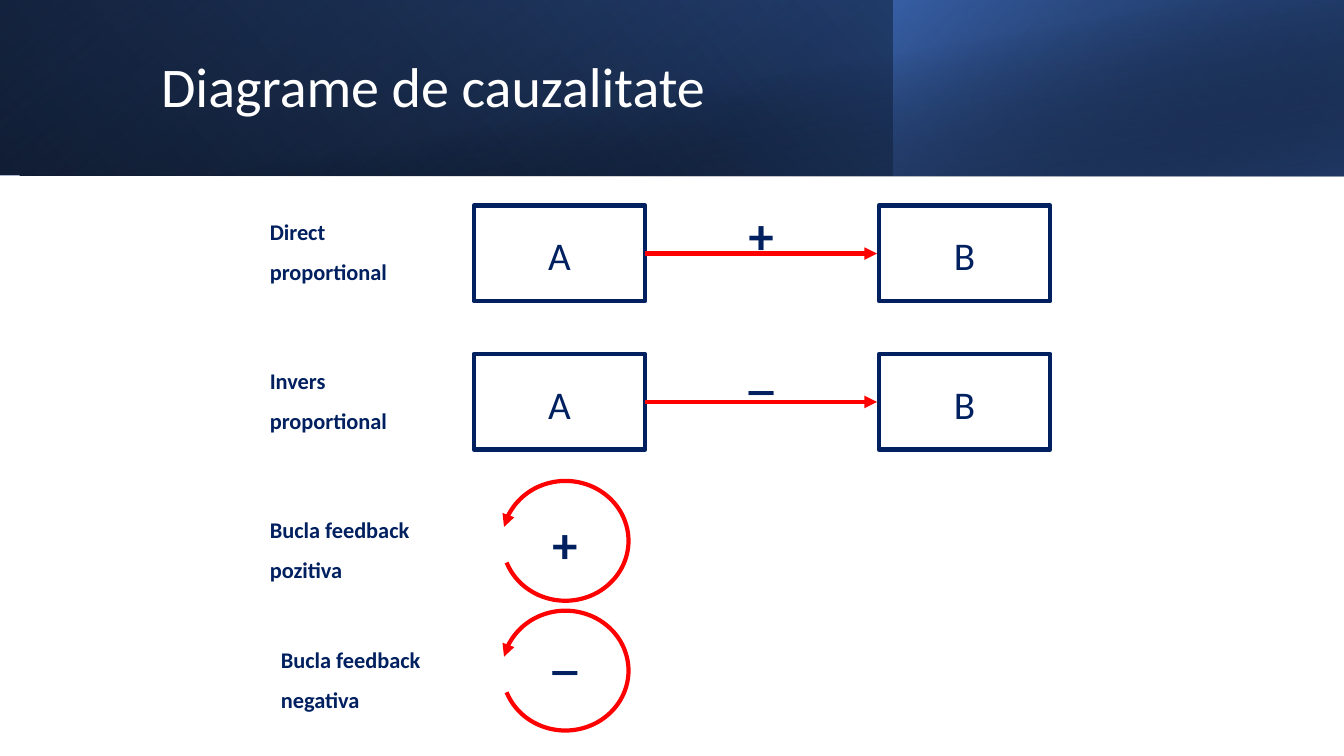
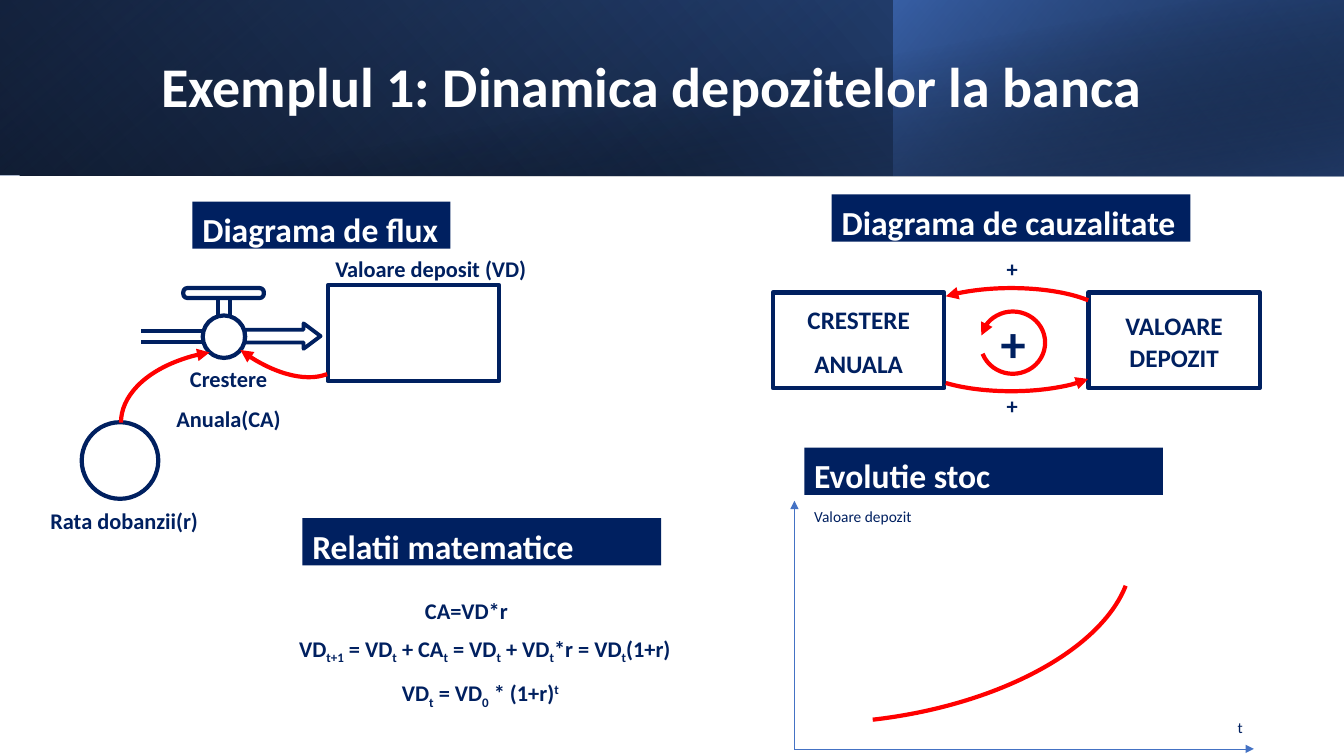
from pptx import Presentation
from pptx.dml.color import RGBColor
from pptx.enum.shapes import MSO_CONNECTOR, MSO_SHAPE
from pptx.enum.text import MSO_ANCHOR, PP_ALIGN
from pptx.oxml.ns import qn
from pptx.oxml.xmlchemy import OxmlElement
from pptx.util import Cm, Pt

COLORS = {
    "navy": "002060", "red": "FF0000", "white": "FFFFFF", "black": "000000",
    "blue": "4472C4", "midblue": "2F5597", "darkblue": "203864",
}
FONT = "Calibri"
WIDTH, HEIGHT = 33.87, 19.05
BOX_W, BOX_H = 4.32, 2.41
LINE_H = 0.86
LOOP = (7.652, 203.85)
BOW = (116.767, 203.85)


class Deck:
    """Hold the shared style and the current slide."""

    def __init__(self):
        self.prs = Presentation()
        self.prs.slide_width, self.prs.slide_height = Cm(WIDTH), Cm(HEIGHT)
        self.slide = None

    def color(self, name):
        return RGBColor.from_string(COLORS[name])

    def add_slide(self, title, bold=False):
        self.slide = self.prs.slides.add_slide(self.prs.slide_layouts[6])
        self.band(0, WIDTH, 4.42, 140, [(0, "black", 100), (1, "midblue", 100)])
        self.band(0, 22.56, 4.42, 230, [(0.2, "blue", 0), (1, "darkblue", 55)], rotation=180)
        self.band(22.53, 11.33, 4.42, 220, [(0, "blue", 66), (1, "black", 30)])
        self.band(1.27, 32.6, 4.45, 280, [(0.5, "black", 0), (0.99, "darkblue", 52)], flip="")
        s = self.text(3.81, 0.81, 28.7, 2.87, [title], 40, "white", bold, wrap=True)
        s.text_frame.vertical_anchor = MSO_ANCHOR.MIDDLE
        p = s.text_frame.paragraphs[0]
        p.line_spacing, p.space_after = 0.9, Pt(0)

    def band(self, x, w, h, angle, stops, flip="H", rotation=0):
        s = self.shape(MSO_SHAPE.RECTANGLE, x, 0, w, h, line=None, flip=flip, rotation=rotation)
        s.fill.gradient()
        s.fill.gradient_angle = angle
        for stop, (position, name, _) in zip(s.fill.gradient_stops, stops):
            stop.position = position
            stop.color.rgb = self.color(name)
        for clr, (_, _, opacity) in zip(s.element.spPr.iter(qn("a:srgbClr")), stops):
            alpha = OxmlElement("a:alpha")
            alpha.set("val", str(opacity * 1000))
            clr.append(alpha)

    def shape(self, kind, x, y, w, h, line="navy", width=3, adj=(), flip="", rotation=0):
        s = self.slide.shapes.add_shape(kind, Cm(x), Cm(y), Cm(w), Cm(h))
        s.shadow.inherit = False
        s.fill.background()
        if line:
            s.line.color.rgb, s.line.width = self.color(line), Pt(width)
        else:
            s.line.fill.background()
        for i, value in enumerate(adj):
            s.adjustments[i] = value
        s.rotation = rotation
        for axis in flip:
            s.element.spPr.find(qn("a:xfrm")).set("flip" + axis, "1")
        return s

    def arrowhead(self, s, end):
        tip = OxmlElement(f"a:{end}End")
        tip.set("type", "triangle")
        s.element.spPr.find(qn("a:ln")).append(tip)

    def arc(self, x, y, w, h, adj, flip, end="head", rotation=0):
        s = self.shape(MSO_SHAPE.ARC, x, y, w, h, "red", adj=adj, flip=flip, rotation=rotation)
        if end:
            self.arrowhead(s, end)

    def line(self, x1, y1, x2, y2, name="navy", width=2.75, arrow=False):
        s = self.slide.shapes.add_connector(MSO_CONNECTOR.STRAIGHT, Cm(x1), Cm(y1), Cm(x2), Cm(y2))
        s.line.color.rgb, s.line.width = self.color(name), Pt(width)
        s.element.spPr.append(OxmlElement("a:effectLst"))
        if arrow:
            self.arrowhead(s, "tail")

    def fill_text(self, s, lines, size, name, bold, align):
        tf = s.text_frame
        for i, text in enumerate(lines):
            p = tf.add_paragraph() if i else tf.paragraphs[0]
            p.alignment, p.line_spacing, p.space_after = align, 1.07, Pt(8)
            p.font.name, p.font.size, p.font.bold = FONT, Pt(size), bold
            p.font.color.rgb = self.color(name)
            for j, piece in enumerate(text.split("|")):
                r = p.add_run()
                r.text = piece.lstrip("^")
                if j % 2:
                    baseline = "30000" if piece.startswith("^") else "-25000"
                    r._r.get_or_add_rPr().set("baseline", baseline)

    def text(self, x, y, w, h, lines, size=16, name="navy", bold=True,
             align=PP_ALIGN.LEFT, wrap=False):
        s = self.slide.shapes.add_textbox(Cm(x), Cm(y), Cm(w), Cm(h))
        s.text_frame.word_wrap = wrap
        self.fill_text(s, lines, size, name, bold, align)
        return s

    def sign(self, x, y, symbol, w=0.86, h=1.83):
        tf = self.text(x, y, w, h, [symbol], 36, wrap=True).text_frame
        tf.margin_left = tf.margin_right = tf.margin_top = tf.margin_bottom = 0

    def box(self, x, y, lines=(), size=28, bold=False):
        s = self.shape(MSO_SHAPE.RECTANGLE, x, y, BOX_W, BOX_H)
        s.text_frame.vertical_anchor = MSO_ANCHOR.MIDDLE
        self.fill_text(s, lines, size, "navy", bold, PP_ALIGN.CENTER)

    def heading(self, x, y, w, text):
        s = self.shape(MSO_SHAPE.RECTANGLE, x, y, w, 1.19, line=None)
        s.fill.solid()
        s.fill.fore_color.rgb = self.color("navy")
        s.text_frame.vertical_anchor = MSO_ANCHOR.TOP
        s.text_frame.margin_right = 0
        self.fill_text(s, [text], 24, "white", True, PP_ALIGN.LEFT)


def causality_slide(d):
    d.add_slide("Diagrame de cauzalitate")
    for y, word, symbol, rise in ((5.18, "Direct", "+", 0.13), (8.92, "Invers", "_", 0.51)):
        d.box(11.94, y, ["A"])
        d.line(16.26, y + 1.21, 22.1, y + 1.21, "red", 3, arrow=True)
        d.box(22.15, y, ["B"])
        d.sign(18.87, y - rise, symbol)
        d.text(6.55, y + 0.15, 3.51, 2.08, [word, "proportional"])
    for y, x, word, symbol, drop in ((12.12, 6.55, "pozitiva", "+", 0.71),
                                     (15.39, 6.83, "negativa", "_", 0.08)):
        d.arc(12.66, y, 3.18, 3.02, LOOP, "HV")
        d.sign(13.92, y + drop, symbol)
        d.text(x, y + 0.72, 4.06, 2.03, ["Bucla feedback", word])


def flow_diagram(d):
    d.heading(4.85, 5.08, 6.5, "Diagrama de flux")
    d.shape(MSO_SHAPE.OVAL, 5.11, 7.95, 1.07, 1.07)
    for x in (5.49, 5.79):
        d.line(x, 7.52, x, 7.95)
    d.shape(MSO_SHAPE.ROUNDED_RECTANGLE, 4.62, 7.26, 2.03, 0.25, adj=(0.41,))
    d.shape(MSO_SHAPE.RIGHT_ARROW, 6.17, 8.15, 1.91, 0.64, width=2.75, adj=(0.5, 0.67))
    for y in (8.33, 8.61):
        d.line(5.13, y, 3.56, y)
    d.box(8.26, 7.19)
    d.shape(MSO_SHAPE.OVAL, 2.06, 10.64, 1.93, 1.93)
    d.arc(3.05, 8.81, 6.15, 3.68, (177.24, 0), "H")
    d.arc(3.86, 5.74, 5.51, 3.07, (177.24, 211.34), "H", rotation=225.1)
    d.text(8.2, 6.25, 5.38, LINE_H, ["Valoare deposit (VD)"])
    d.text(1.02, 12.6, 4.27, LINE_H, ["Rata dobanzii(r)"])
    d.text(4.17, 9.04, 3.18, 2.13, ["Crestere", "Anuala(CA)"], align=PP_ALIGN.CENTER)


def causal_diagram(d):
    d.heading(20.96, 4.9, 9.04, "Diagrama de cauzalitate")
    d.box(27.43, 7.37, ["VALOARE DEPOZIT"], 18, True)
    d.box(19.48, 7.37, ["CRESTERE", "ANUALA"], 18, True)
    d.arc(23.01, 7.26, 4.95, 1.63, BOW, "H", "tail")
    d.arc(23.01, 8.23, 4.95, 1.63, BOW, "HV")
    for y in (6.25, 9.7):
        d.text(25.12, y, 0.81, LINE_H, ["+"])
    d.arc(24.71, 7.85, 1.63, 1.57, LOOP, "HV")
    d.sign(25.22, 7.75, "+", 1.19, 1.32)


def formulas(d):
    d.heading(7.62, 13.06, 9.04, "Relatii matematice")
    d.text(10.46, 14.88, 2.62, LINE_H, ["CA=VD*r"])
    d.text(7.29, 15.82, 10.03, LINE_H,
           ["VD|t+1| = VD|t| + CA|t| = VD|t| + VD|t|*r = VD|t|(1+r)"])
    d.text(9.88, 16.94, 4.55, LINE_H, ["VD|t| = VD|0| * (1+r)|^t"])


def stock_curve(d):
    d.heading(20.27, 11.28, 9.04, "Evolutie stoc")
    for x, y in ((31.6, 18.87), (20.02, 12.62)):
        d.line(20.02, 18.87, x, y, "blue", 0.5, arrow=True)
    d.arc(14.63, 11.02, 13.92, 7.14, (162, 211.23), "V", end=None, rotation=353.5)
    d.text(30.94, 17.93, 0.66, 0.79, ["t"], 11, bold=False)
    d.text(20.27, 12.62, 3, 0.79, ["Valoare depozit"], 11, bold=False)


def main():
    d = Deck()
    causality_slide(d)
    d.add_slide("Exemplul 1: Dinamica depozitelor la banca", bold=True)
    for part in (flow_diagram, causal_diagram, formulas, stock_curve):
        part(d)
    d.prs.save("out.pptx")


if __name__ == "__main__":
    main()
